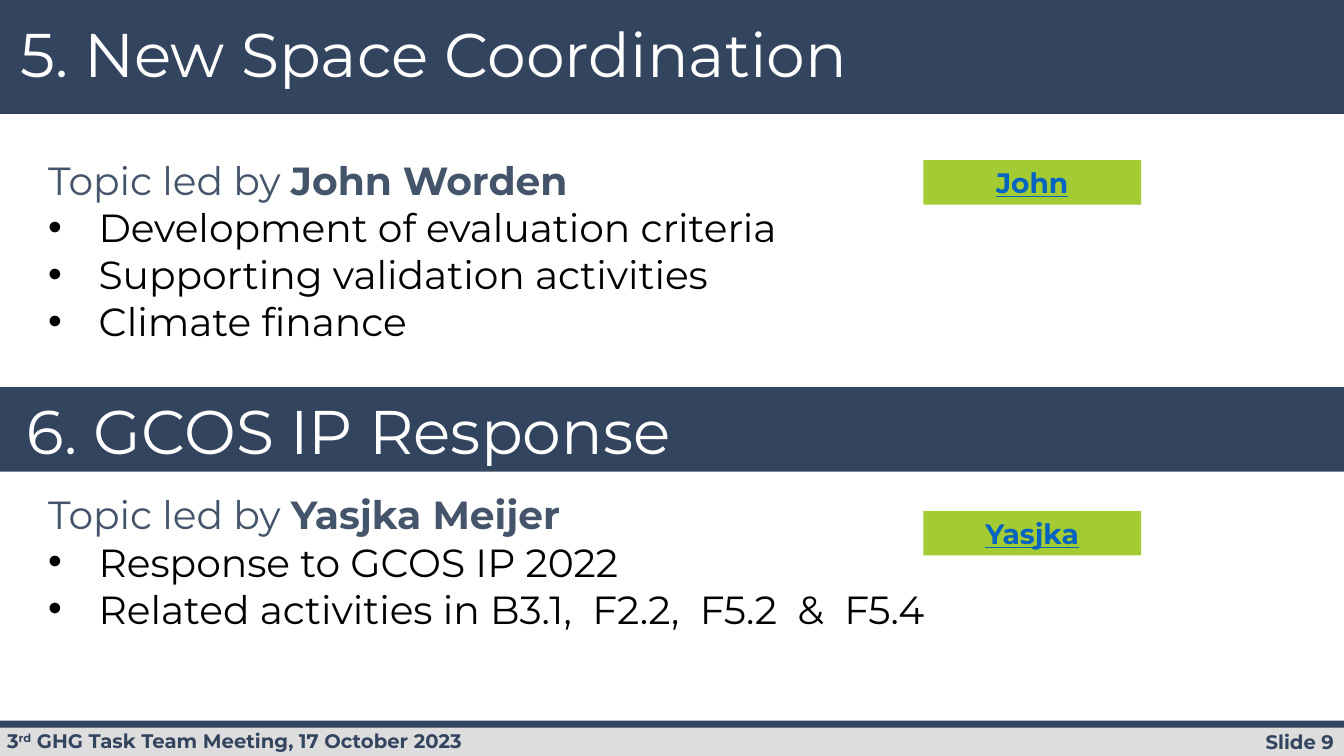
from dataclasses import dataclass

from lxml.etree import SubElement
from pptx import Presentation
from pptx.dml.color import RGBColor
from pptx.enum.shapes import MSO_SHAPE
from pptx.enum.text import MSO_ANCHOR, PP_ALIGN
from pptx.oxml.ns import qn
from pptx.util import Inches, Pt


@dataclass(frozen=True)
class Theme:
    font: str = "Montserrat"
    navy: str = "33445F"
    slate: str = "44546A"
    grey: str = "DDDDDD"
    green: str = "A3CB34"
    blue: str = "0563C1"
    black: str = "000000"
    white: str = "FFFFFF"
    heading: int = 44
    body: int = 28
    badge: int = 20
    footer: int = 14


THEME = Theme()
WIDTH, HEIGHT = Inches(13.33), Inches(7.5)
COLUMNS, ROWS = 40, 30


def grid(column, row, columns, rows):
    return (int(WIDTH * column / COLUMNS), int(HEIGHT * row / ROWS),
            int(WIDTH * columns / COLUMNS), int(HEIGHT * rows / ROWS))


def write(paragraph, text, size=THEME.body, color=THEME.black, bold=False,
          underline=False, raised=False):
    run = paragraph.add_run()
    run.text = text
    run.font.name = THEME.font
    run.font.size = Pt(size)
    run.font.color.rgb = RGBColor.from_string(color)
    run.font.bold = bold
    run.font.underline = underline
    if raised:
        run.font._element.set("baseline", "30000")


def prepare(frame, left=0.1, anchor=MSO_ANCHOR.TOP, align=PP_ALIGN.LEFT):
    frame.word_wrap = True
    frame.vertical_anchor = anchor
    frame.margin_left, frame.margin_right = Inches(left), Inches(0.1)
    frame.margin_top = frame.margin_bottom = Inches(0.05)
    first = frame.paragraphs[0]
    first.alignment = align
    return first


def add_bar(slide, cells, color):
    bar = slide.shapes.add_shape(MSO_SHAPE.RECTANGLE, *grid(*cells))
    bar.shadow.inherit = False
    bar.fill.solid()
    bar.fill.fore_color.rgb = RGBColor.from_string(color)
    bar.line.fill.background()
    return bar


def add_box(slide, cells):
    return slide.shapes.add_textbox(*grid(*cells)).text_frame


def add_bullet(paragraph):
    properties = paragraph._p.get_or_add_pPr()
    properties.set("marL", str(Inches(0.5)))
    properties.set("indent", str(-Inches(0.5)))
    color = SubElement(properties, qn("a:buClr"))
    SubElement(color, qn("a:srgbClr"), val=THEME.black)
    SubElement(properties, qn("a:buFont"), typeface="Arial")
    SubElement(properties, qn("a:buChar"), char="•")


def add_title(slide, text):
    title = slide.shapes.title
    title.left, title.top, title.width, title.height = grid(0.3, 0.44, 31.74, 3.36)
    slide.shapes._spTree.append(title._element)
    write(prepare(title.text_frame), text, size=THEME.heading, color=THEME.white)


def add_section_band(slide, row, text):
    band = add_bar(slide, (0, row, COLUMNS, 3.36), THEME.navy)
    write(prepare(band.text_frame, left=0.26, anchor=MSO_ANCHOR.MIDDLE), text,
          size=THEME.heading, color=THEME.white)


def add_topic(slide, row, rows, leader, points):
    frame = add_box(slide, (1.14, row, 31.32, rows))
    lead = prepare(frame)
    lead.line_spacing = 1.3
    write(lead, "Topic led by ", color=THEME.slate)
    write(lead, leader, color=THEME.slate, bold=True)
    for point in points:
        paragraph = frame.add_paragraph()
        add_bullet(paragraph)
        write(paragraph, point)


def add_badge(slide, row, name):
    badge = add_bar(slide, (27.48, row, 6.48, 1.76), THEME.green)
    label = prepare(badge.text_frame, anchor=MSO_ANCHOR.MIDDLE, align=PP_ALIGN.CENTER)
    write(label, name, size=THEME.badge, color=THEME.blue, bold=True, underline=True)


def add_footer(slide):
    style = dict(size=THEME.footer, color=THEME.navy, bold=True)
    add_bar(slide, (0, 28.76, COLUMNS, 1.24), THEME.grey)
    add_bar(slide, (0, 28.6, COLUMNS, 0.28), THEME.navy)
    number = add_box(slide, (33.67, 28.76, 6.33, 1.36))
    write(prepare(number, align=PP_ALIGN.RIGHT), "Slide 9", **style)
    meeting = prepare(add_box(slide, (0, 28.72, 16.08, 1.36)), left=0.07)
    write(meeting, "3", **style)
    write(meeting, "rd", raised=True, **style)
    write(meeting, " GHG Task Team Meeting, 17 October 2023", **style)


def main():
    deck = Presentation()
    deck.slide_width, deck.slide_height = WIDTH, HEIGHT
    slide = deck.slides.add_slide(deck.slide_layouts.get_by_name("Title Only"))

    add_bar(slide, (0, 0, COLUMNS, 4.52), THEME.navy)
    add_footer(slide)
    add_title(slide, "5. New Space Coordination")
    add_topic(slide, 5.44, 8.52, "John Worden", [
        "Development of evaluation criteria",
        "Supporting validation activities",
        "Climate finance",
    ])
    add_badge(slide, 6.36, "John")
    add_section_band(slide, 15.36, "6. GCOS IP Response")
    add_topic(slide, 18.72, 6.64, "Yasjka Meijer", [
        "Response to GCOS IP 2022",
        "Related activities in B3.1,  F2.2,  F5.2  &  F5.4",
    ])
    add_badge(slide, 20.28, "Yasjka")
    deck.save("out.pptx")


if __name__ == "__main__":
    main()
